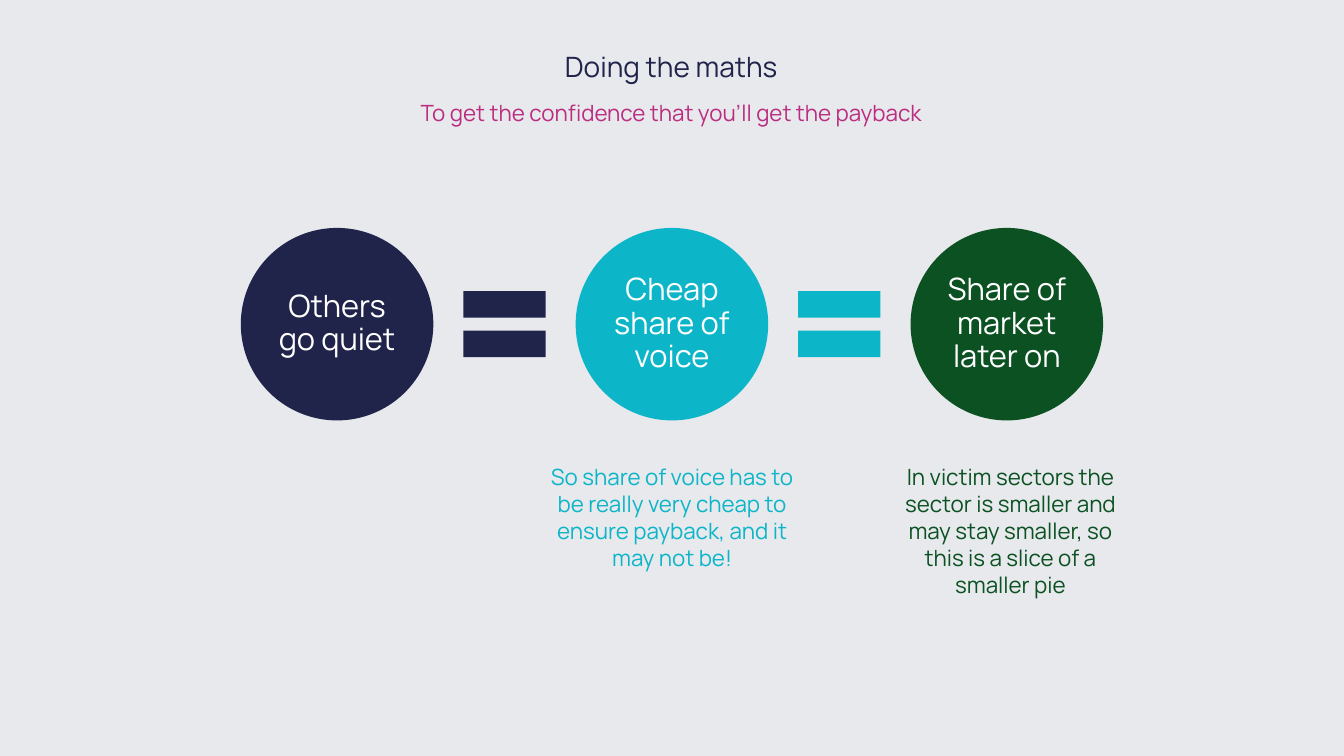
import pptx
import pptx.util
import pptx.dml.color
import pptx.enum.shapes
import pptx.enum.text

Pt = pptx.util.Pt
SHAPE = pptx.enum.shapes.MSO_SHAPE
ANCHOR = pptx.enum.text.MSO_ANCHOR
FONT = "Manrope"
PAPER, NAVY, TEAL, GREEN, WHITE = "E8E9ED", "20234A", "0DB5C8", "0B5122", "FFFFFF"

# words, box (left, top, width, height), size, colour, line spacing, anchor
TEXTS = [
    ("Doing the maths", (41, 18.7, 877, 44.6), 20, "20244A", 0.9, ANCHOR.BOTTOM),
    ("To get the confidence that you’ll get the payback",
     (41, 69.8, 877, 24.5), 16, "BA2D80", 0.9, ANCHOR.TOP),
    ("So share of voice has to be really very cheap to ensure payback, and it may not be!",
     (385.8, 327.6, 188.6, 104.4), 16, TEAL, 1.0, ANCHOR.TOP),
    ("In victim sectors the sector is smaller and may stay smaller, so this is a slice of a smaller pie",
     (627.8, 327.6, 188, 104.4), 16, GREEN, 1.0, ANCHOR.TOP),
]
STEPS = [
    ("Others go quiet", NAVY),
    ("Cheap share of voice", TEAL),
    ("Share of market later on", GREEN),
]
LEFT, TOP, DISC, SIGN, PITCH = 172, 162.8, 137.5, 80, 239.2


def color(code):
    return pptx.dml.color.RGBColor.from_string(code)


def write(shape, words, size, code, space, anchor, inset=None):
    frame = shape.text_frame
    form = {"word_wrap": True, "vertical_anchor": anchor}
    if inset is not None:
        for side in ("left", "top", "right", "bottom"):
            form["margin_" + side] = Pt(inset)
    for name, value in form.items():
        setattr(frame, name, value)
    para = frame.paragraphs[0]
    para.alignment = pptx.enum.text.PP_ALIGN.CENTER
    para.line_spacing = space
    run = para.add_run()
    run.text = words
    for name, value in {"name": FONT, "size": Pt(size)}.items():
        setattr(run.font, name, value)
    run.font.color.rgb = color(code)


def draw(slide, kind, left, top, size, code):
    shape = slide.shapes.add_shape(kind, Pt(left), Pt(top), Pt(size), Pt(size))
    shape.shadow.inherit = False
    shape.fill.solid()
    shape.fill.fore_color.rgb = color(code)
    shape.line.fill.background()
    return shape


def main():
    deck = pptx.Presentation()
    deck.slide_width, deck.slide_height = Pt(960), Pt(540)
    slide = deck.slides.add_slide(deck.slide_layouts[6])
    slide.background.fill.solid()
    slide.background.fill.fore_color.rgb = color(PAPER)

    for words, box, *style in TEXTS:
        write(slide.shapes.add_textbox(*map(Pt, box)), words, *style)

    for i, (words, code) in enumerate(STEPS):
        left = LEFT + i * PITCH
        disc = draw(slide, SHAPE.OVAL, left, TOP, DISC, code)
        write(disc, words, 22, WHITE, 0.9, ANCHOR.MIDDLE, 2)
        if i < len(STEPS) - 1:
            draw(slide, SHAPE.MATH_EQUAL, left + (DISC + PITCH - SIGN) / 2,
                 TOP + (DISC - SIGN) / 2, SIGN, code)

    deck.save("out.pptx")


if __name__ == "__main__":
    main()
